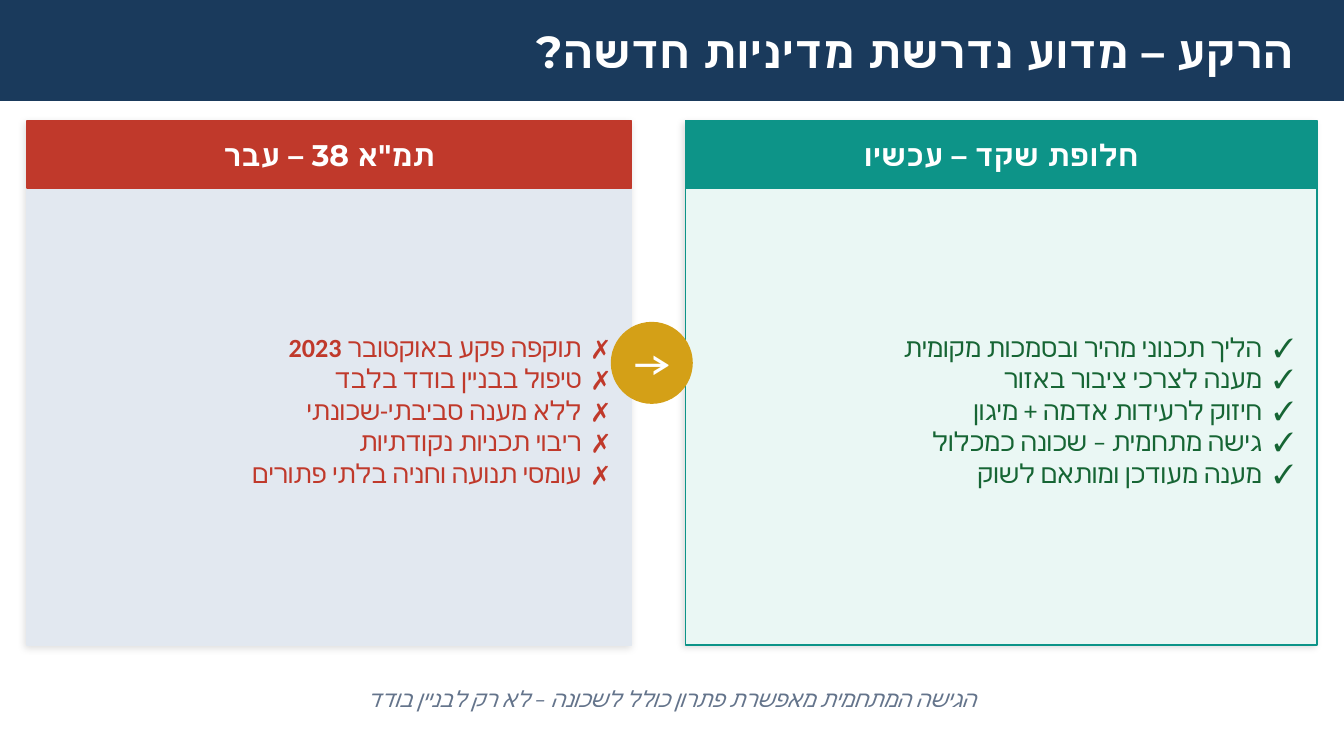
from dataclasses import dataclass

from lxml.etree import SubElement as Sub
from pptx import Presentation
from pptx.dml.color import RGBColor as Rgb
from pptx.enum.shapes import MSO_SHAPE as Kind
from pptx.enum.text import MSO_ANCHOR as Anchor, PP_ALIGN as Align
from pptx.oxml.ns import qn
from pptx.util import Pt

PX = 6096  # EMU per px, 150 px to the inch


@dataclass(frozen=True)
class Theme:
    navy: str = "1A3A5C"
    red: str = "C0392B"
    pale: str = "E2E8F0"
    teal: str = "0D9488"
    mint: str = "EAF7F4"
    green: str = "166534"
    gold: str = "D4A017"
    gray: str = "64748B"
    white: str = "FFFFFF"
    head: str = "Montserrat"
    body: str = "Calibri"
    icon: str = "Cabin"
    title: float = 32
    arrow: float = 26.7
    label: float = 21.3
    item: float = 18.7
    note: float = 16


T = Theme()


def scale(box):
    return [n * PX for n in box]


def add_shadow(shape):
    effects = shape._element.spPr.find(qn("a:effectLst"))
    outer = Sub(effects, qn("a:outerShdw"), blurRad=str(Pt(5)),
                dist=str(Pt(2)), dir=str(135 * 60000), algn="bl",
                rotWithShape="0")
    black = Sub(outer, qn("a:srgbClr"), val="000000")
    Sub(black, qn("a:alpha"), val="12000")


def add_block(slide, box, fill, line=None, kind=Kind.RECTANGLE, shadow=False):
    shape = slide.shapes.add_shape(kind, *scale(box))
    shape.shadow.inherit = False
    shape.fill.solid()
    shape.fill.fore_color.rgb = Rgb.from_string(fill)
    shape.line.color.rgb = Rgb.from_string(line or fill)
    shape.line.width = Pt(1)
    if shadow:
        add_shadow(shape)


def set_font(para, face, size, color, bold, italic):
    font = para.font
    font.name, font.size = face, Pt(size)
    font.bold, font.italic = bold, italic
    font.color.rgb = Rgb.from_string(color)
    # Hebrew takes its face from the complex script slot
    props = para._p.pPr.find(qn("a:defRPr"))
    for slot in ("a:ea", "a:cs"):
        Sub(props, qn(slot), typeface=face)


def add_text(slide, box, lines, face, size, color, align=Align.CENTER,
             bold=1, italic=False):
    """Write right-to-left lines, the first `bold` of them in bold."""
    frame = slide.shapes.add_textbox(*scale(box)).text_frame
    frame.word_wrap = True
    frame.vertical_anchor = Anchor.MIDDLE
    for i, line in enumerate(lines):
        para = frame.add_paragraph() if i else frame.paragraphs[0]
        para.text = line
        para.alignment = align
        para._p.get_or_add_pPr().set("rtl", "1")
        set_font(para, face, size, color, i < bold, italic)


def add_panel(slide, left, width, label, mark, items, main, back, edge, ink):
    top = (left, 180, width, 100)
    add_block(slide, (left, 180, width, 780), back, edge, shadow=True)
    add_block(slide, top, main)
    add_text(slide, top, [label], T.head, T.label, T.white)
    add_text(slide, (left + 20, 300, width - 40, 620),
             [f"{mark}  {item}" for item in items],
             T.body, T.item, ink, Align.RIGHT)


def main():
    deck = Presentation()
    deck.slide_width, deck.slide_height = scale((2000, 1125))
    slide = deck.slides.add_slide(deck.slide_layouts[6])

    # Title bar
    add_block(slide, (0, 0, 2000, 150), T.navy)
    add_text(slide, (60, 10, 1880, 130), ["הרקע – מדוע נדרשת מדיניות חדשה?"],
             T.head, T.title, T.white, Align.RIGHT)

    # Past and present panels
    add_panel(slide, 40, 900, 'תמ"א 38 – עבר', "✗", [
        "תוקפה פקע באוקטובר 2023",
        "טיפול בבניין בודד בלבד",
        "ללא מענה סביבתי-שכונתי",
        "ריבוי תכניות נקודתיות",
        "עומסי תנועה וחניה בלתי פתורים",
    ], T.red, T.pale, T.pale, T.red)
    add_panel(slide, 1020, 940, "חלופת שקד – עכשיו", "✓", [
        "הליך תכנוני מהיר ובסמכות מקומית",
        "מענה לצרכי ציבור באזור",
        "חיזוק לרעידות אדמה + מיגון",
        "גישה מתחמית – שכונה כמכלול",
        "מענה מעודכן ומותאם לשוק",
    ], T.teal, T.mint, T.teal, T.green)

    # Arrow badge
    add_block(slide, (910, 480, 120, 120), T.gold, kind=Kind.OVAL)
    add_text(slide, (900, 485, 140, 100), ["→"], T.icon, T.arrow, T.white)

    # Closing note
    add_text(slide, (40, 1000, 1920, 80),
             ["הגישה המתחמית מאפשרת פתרון כולל לשכונה – לא רק לבניין בודד"],
             T.body, T.note, T.gray, bold=0, italic=True)

    deck.save("out.pptx")


if __name__ == "__main__":
    main()
